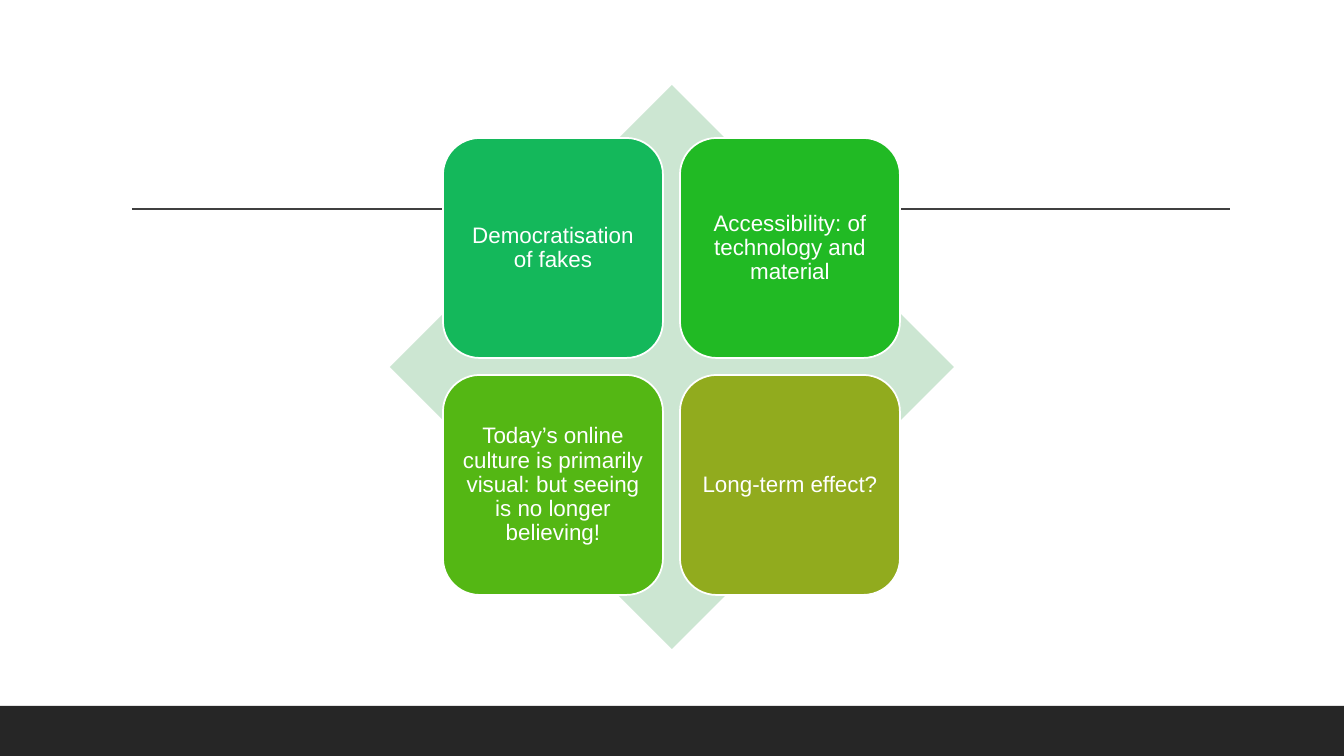
from pptx import Presentation
from pptx.dml.color import RGBColor
from pptx.enum.shapes import MSO_CONNECTOR, MSO_SHAPE
from pptx.enum.text import MSO_ANCHOR, PP_ALIGN
from pptx.oxml.ns import qn
from pptx.util import Emu, Pt
from lxml.etree import SubElement

EMU_PER_PX = 914400 / 100.8
SLIDE_W, SLIDE_H = 1344, 756
TILES = [
    ("Democratisation of fakes", "14B85B"),
    ("Accessibility: of technology and material", "21BA24"),
    ("Today’s online culture is primarily visual: but seeing is no longer believing!", "54B714"),
    ("Long-term effect?", "91AB1E"),
]


def px(n):
    return Emu(round(n * EMU_PER_PX))


def rgb(value):
    return RGBColor.from_string(value)


def add_filled(slide, kind, x, y, w, h, fill):
    sp = slide.shapes.add_shape(kind, px(x), px(y), px(w), px(h))
    sp.shadow.inherit = False
    sp.fill.solid()
    sp.fill.fore_color.rgb = rgb(fill)
    sp.line.fill.background()
    return sp


def add_frame(slide):
    """Draw the dark footer band and the horizontal rule."""
    add_filled(slide, MSO_SHAPE.RECTANGLE, 0, 706, SLIDE_W, 50, "262626")
    rule = slide.shapes.add_connector(MSO_CONNECTOR.STRAIGHT, px(132), px(209), px(1230), px(209))
    rule.line.color.rgb = rgb("404040")
    rule.line.width = Pt(1)
    SubElement(rule._element.spPr, qn("a:effectLst"))


def add_tile(slide, x, y, size, text, fill):
    sp = add_filled(slide, MSO_SHAPE.ROUNDED_RECTANGLE, x, y, size, size, fill)
    sp.line.color.rgb = rgb("FFFFFF")
    sp.line.width = Pt(1.25)
    tf = sp.text_frame
    tf.word_wrap = True
    tf.vertical_anchor = MSO_ANCHOR.MIDDLE
    tf.margin_left = tf.margin_right = tf.margin_top = tf.margin_bottom = px(7)
    p = tf.paragraphs[0]
    p.text = text
    p.alignment = PP_ALIGN.CENTER
    p.line_spacing = 0.9
    p.font.name = "Arial"
    p.font.size = Pt(16)
    p.font.color.rgb = rgb("FFFFFF")


def add_matrix(slide, x, y, size):
    """Draw a diamond with a two-by-two grid of tiles centred on it."""
    add_filled(slide, MSO_SHAPE.DIAMOND, x, y, size, size, "CCE6D2")
    tile, gap = 220, 17
    inset = (size - 2 * tile - gap) // 2
    for i, (text, fill) in enumerate(TILES):
        row, col = divmod(i, 2)
        add_tile(slide, x + inset + col * (tile + gap), y + inset + row * (tile + gap),
                 tile, text, fill)


def main():
    prs = Presentation()
    prs.slide_width, prs.slide_height = px(SLIDE_W), px(SLIDE_H)
    slide = prs.slides.add_slide(prs.slide_layouts[6])
    add_frame(slide)
    add_matrix(slide, 390, 85, 564)
    prs.save("out.pptx")


if __name__ == "__main__":
    main()
